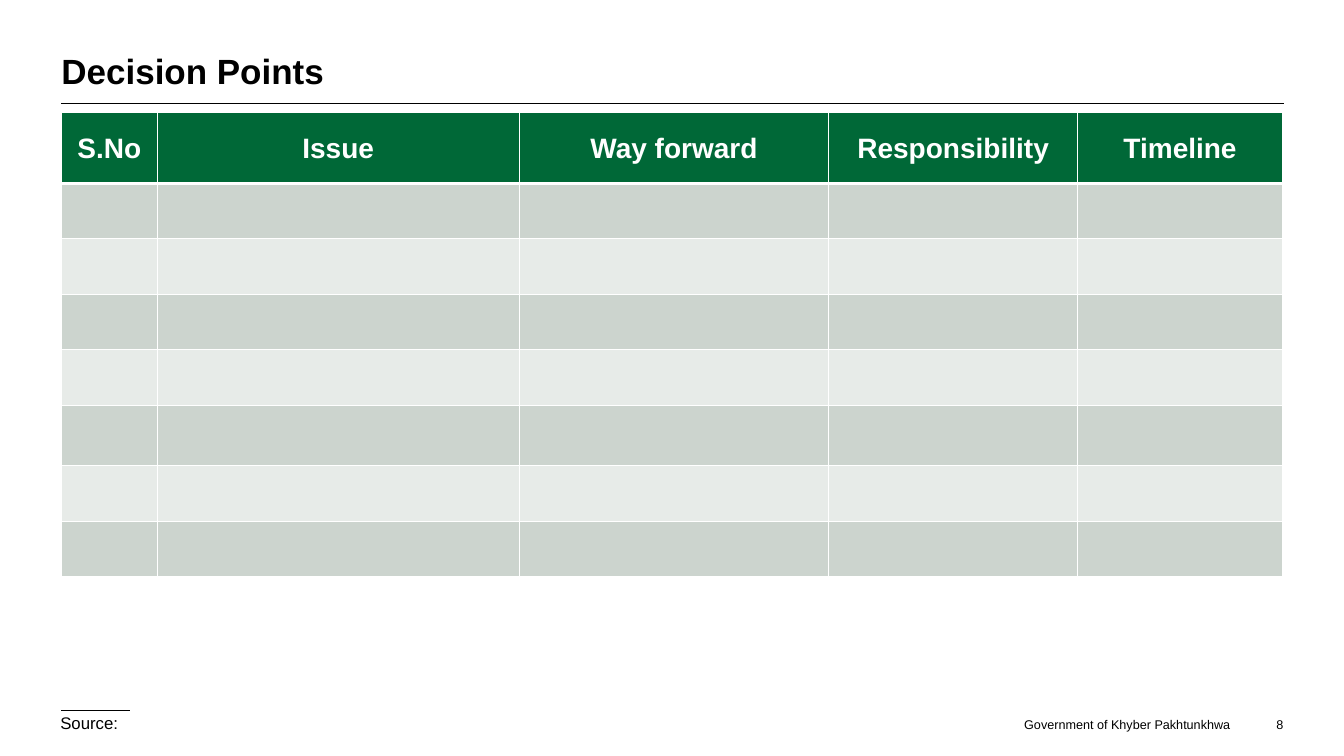
from lxml import etree
from pptx import Presentation
from pptx import util as u
from pptx.dml.color import RGBColor
from pptx.enum import shapes, text
from pptx.oxml import ns

BLACK = RGBColor(0x00, 0x00, 0x00)
WHITE = RGBColor(0xFF, 0xFF, 0xFF)
GREEN = RGBColor(0x00, 0x68, 0x37)
DARK_BAND = RGBColor(0xCC, 0xD4, 0xCE)
LIGHT_BAND = RGBColor(0xE7, 0xEB, 0xE8)

HEADERS = ["S.No", "Issue", "Way forward", "Responsibility", "Timeline"]
COLUMN_WIDTHS = [0.95, 3.59, 3.07, 2.47, 2.03]
ROW_HEIGHTS = [0.7, 0.55, 0.55, 0.55, 0.55, 0.6, 0.55, 0.55]
LEFT, RIGHT = 0.61, 12.73


class SlideBuilder:
    font_name = "Arial"

    def __init__(self, slide):
        self.slide = slide

    def style(self, paragraph, size, color=BLACK, bold=False, align=text.PP_ALIGN.LEFT):
        paragraph.alignment = align
        paragraph.font.name = self.font_name
        paragraph.font.size = u.Pt(size)
        paragraph.font.bold = bold
        paragraph.font.color.rgb = color

    def text_box(self, words, left, top, width, height, size, *, bold=False, inset=(0, 0),
                 align=text.PP_ALIGN.LEFT, anchor=text.MSO_ANCHOR.TOP, wrap=True):
        """Add one paragraph; inset is the horizontal and the vertical margin."""
        box = self.slide.shapes.add_textbox(
            u.Inches(left), u.Inches(top), u.Inches(width), u.Inches(height))
        frame = box.text_frame
        frame.word_wrap = wrap
        frame.vertical_anchor = anchor
        frame.margin_left = frame.margin_right = u.Inches(inset[0])
        frame.margin_top = frame.margin_bottom = u.Inches(inset[1])
        paragraph = frame.paragraphs[0]
        paragraph.text = words
        self.style(paragraph, size, bold=bold, align=align)

    def rule(self, left, right, top):
        line = self.slide.shapes.add_connector(
            shapes.MSO_CONNECTOR.STRAIGHT,
            u.Inches(left), u.Inches(top), u.Inches(right), u.Inches(top))
        line.line.color.rgb = BLACK
        line.line.width = u.Pt(0.5)
        etree.SubElement(line._element.spPr, ns.qn("a:effectLst"))

    def cell_borders(self, cell, top, bottom):
        """Draw white borders, with the top and bottom widths in points."""
        properties = cell._tc.get_or_add_tcPr()
        for side, width in (("L", 1), ("R", 1), ("T", top), ("B", bottom)):
            border = etree.SubElement(properties, ns.qn(f"a:ln{side}"), w=str(u.Pt(width)))
            fill = etree.SubElement(border, ns.qn("a:solidFill"))
            etree.SubElement(fill, ns.qn("a:srgbClr"), val=str(WHITE))

    def header_cell(self, cell, words):
        cell.vertical_anchor = text.MSO_ANCHOR.MIDDLE
        cell.margin_left = cell.margin_right = cell.margin_top = u.Inches(0.01)
        cell.margin_bottom = 0
        paragraph = cell.text_frame.paragraphs[0]
        paragraph.text = words
        self.style(paragraph, 20, WHITE, True, text.PP_ALIGN.CENTER)

    def table(self, left, top, headers, column_widths, row_heights):
        """Add a table with a header row above empty banded rows."""
        table = self.slide.shapes.add_table(
            len(row_heights), len(column_widths), u.Inches(left), u.Inches(top),
            u.Inches(sum(column_widths)), u.Inches(sum(row_heights))).table
        table.horz_banding = False
        for column, width in zip(table.columns, column_widths):
            column.width = u.Inches(width)
        for index, (row, height) in enumerate(zip(table.rows, row_heights)):
            row.height = u.Inches(height)
            band = DARK_BAND if index % 2 else LIGHT_BAND
            for cell, header in zip(row.cells, headers):
                self.cell_borders(cell, top=3 if index == 1 else 1,
                                  bottom=3 if index == 0 else 1)
                cell.fill.solid()
                cell.fill.fore_color.rgb = band if index else GREEN
                if index == 0:
                    self.header_cell(cell, header)


def main():
    presentation = Presentation()
    presentation.slide_width = u.Inches(13.33)
    presentation.slide_height = u.Inches(7.5)
    builder = SlideBuilder(presentation.slides.add_slide(presentation.slide_layouts[6]))

    builder.text_box("Government of Khyber Pakhtunkhwa", 10.15, 7.11, 2.06, 0.15, 9,
                     align=text.PP_ALIGN.CENTER, anchor=text.MSO_ANCHOR.MIDDLE, wrap=False)
    builder.rule(LEFT, 1.29, 7.05)
    builder.rule(LEFT, RIGHT, 1.03)
    builder.text_box("8", 12.37, 7.11, 0.36, 0.15, 9,
                     align=text.PP_ALIGN.RIGHT, anchor=text.MSO_ANCHOR.BOTTOM)
    builder.text_box("Decision Points", LEFT, 0.11, 11.11, 0.8, 25,
                     bold=True, anchor=text.MSO_ANCHOR.BOTTOM)
    builder.table(LEFT, 1.12, HEADERS, COLUMN_WIDTHS, ROW_HEIGHTS)
    builder.text_box("Source:", 0.5, 7.02, 7.6, 0.3, 12, inset=(0.1, 0.05))

    presentation.save("out.pptx")


if __name__ == "__main__":
    main()
